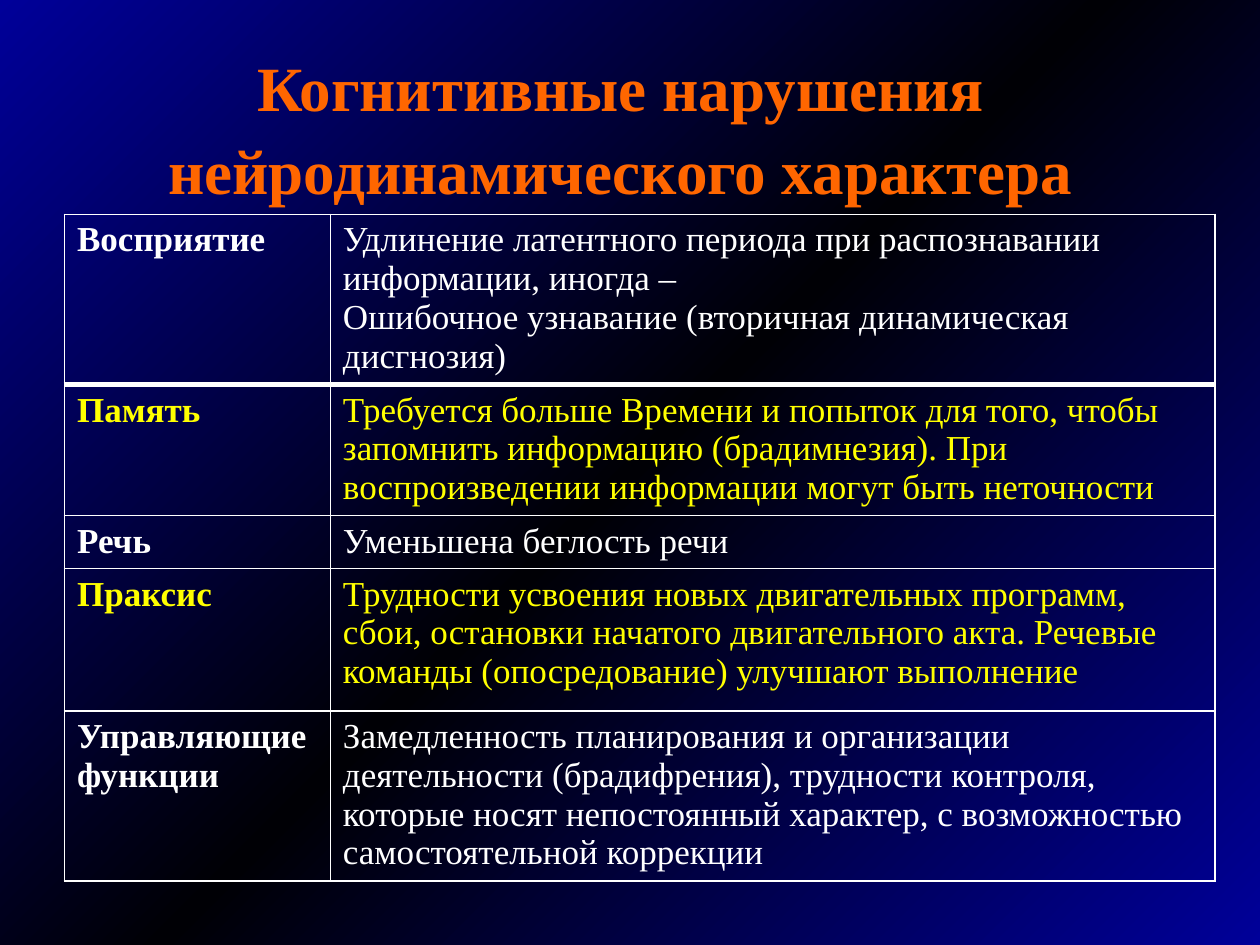
from copy import deepcopy
from dataclasses import dataclass

from lxml import etree
from pptx import Presentation
from pptx import util as u
from pptx.dml.color import RGBColor
from pptx.enum import text
from pptx.oxml import ns


@dataclass(frozen=True)
class Theme:
    font: str = "Times New Roman"
    title_size: int = 36
    body_size: int = 20
    title: str = "FF6600"
    plain: str = "FFFFFF"
    accent: str = "FFFF00"
    backdrop: tuple = ("000099", "000005", "000099")
    thin: int = 1
    thick: int = 3


ROWS = [
    ("Восприятие", 3.43, [
        "Удлинение латентного периода при распознавании информации, иногда –",
        "Ошибочное узнавание (вторичная динамическая дисгнозия)"]),
    ("Память", 2.64, [
        "Требуется больше Времени и попыток для того, чтобы запомнить информацию (брадимнезия). При",
        "воспроизведении информации могут быть неточности"]),
    ("Речь", 1.07, ["Уменьшена беглость речи"]),
    ("Праксис", 2.87, [
        "Трудности усвоения новых двигательных программ, сбои, остановки начатого "
        "двигательного акта. Речевые команды (опосредование) улучшают выполнение"]),
    ("Управляющие функции", 3.43, [
        "Замедленность планирования и организации деятельности (брадифрения), трудности "
        "контроля, которые носят непостоянный характер, с возможностью самостоятельной коррекции"]),
]
COLUMNS = (5.36, 17.83)


def write(frame, lines, *, font, size, color, bold=False, align=None, spacing=None):
    frame.word_wrap = True
    for index, line in enumerate(lines):
        para = frame.paragraphs[0] if index == 0 else frame.add_paragraph()
        para.alignment = align
        para.line_spacing = spacing
        span = para.add_run()
        span.text = line
        span.font.name = font
        span.font.size = u.Pt(size)
        span.font.bold = bold
        span.font.color.rgb = RGBColor.from_string(color)


class Builder:
    """Hold the theme and the current slide, and add elements to it."""

    def __init__(self, theme, page):
        self.theme = theme
        self.page = page

    def background(self):
        fill = self.page.background.fill
        fill.gradient()
        fill.gradient_angle = 315
        stops = fill.gradient_stops
        first = stops[0]._gs
        first.addnext(deepcopy(first))
        colors = self.theme.backdrop
        for index, (stop, color) in enumerate(zip(fill.gradient_stops, colors)):
            stop.color.rgb = RGBColor.from_string(color)
            stop.position = index / (len(colors) - 1)

    def title(self, words, left, top, width, height):
        box = self.page.shapes.title
        box.left, box.top, box.width, box.height = map(u.Cm, (left, top, width, height))
        frame = box.text_frame
        frame.auto_size = text.MSO_AUTO_SIZE.NONE
        frame.vertical_anchor = text.MSO_ANCHOR.MIDDLE
        write(frame, [words], font=self.theme.font, size=self.theme.title_size,
              color=self.theme.title, bold=True, align=text.PP_ALIGN.CENTER, spacing=1.1)

    def border(self, cell, side, width):
        line = etree.SubElement(cell._tc.get_or_add_tcPr(), ns.qn(f"a:ln{side}"),
                                w=str(u.Pt(width)))
        solid = etree.SubElement(line, ns.qn("a:solidFill"))
        etree.SubElement(solid, ns.qn("a:srgbClr"), val=self.theme.plain)

    def cell(self, cell, lines, row, color, bold):
        theme = self.theme
        heavy = {(0, "B"), (1, "T")}
        for side in "LRTB":
            self.border(cell, side, theme.thick if (row, side) in heavy else theme.thin)
        cell.fill.background()
        write(cell.text_frame, lines, font=theme.font, size=theme.body_size,
              color=color, bold=bold)

    def table(self, rows, columns, left, top):
        width, height = sum(columns), sum(row[1] for row in rows)
        table = self.page.shapes.add_table(
            len(rows), len(columns), *map(u.Cm, (left, top, width, height))).table
        table.first_row = table.horz_banding = False
        for column, size in zip(table.columns, columns):
            column.width = u.Cm(size)
        for index, (label, size, lines) in enumerate(rows):
            table.rows[index].height = u.Cm(size)
            color = self.theme.accent if index % 2 else self.theme.plain
            self.cell(table.cell(index, 0), [label], index, color, True)
            self.cell(table.cell(index, 1), lines, index, color, False)


def main():
    deck = Presentation()
    deck.slide_width, deck.slide_height = u.Cm(25.4), u.Cm(19.05)
    builder = Builder(Theme(), deck.slides.add_slide(deck.slide_layouts[5]))
    builder.background()
    builder.title("Когнитивные нарушения нейродинамического характера",
                  -0.89, 0.91, 26.8, 3.18)
    builder.table(ROWS, COLUMNS, 1.3, 4.32)
    deck.save("out.pptx")


if __name__ == "__main__":
    main()
